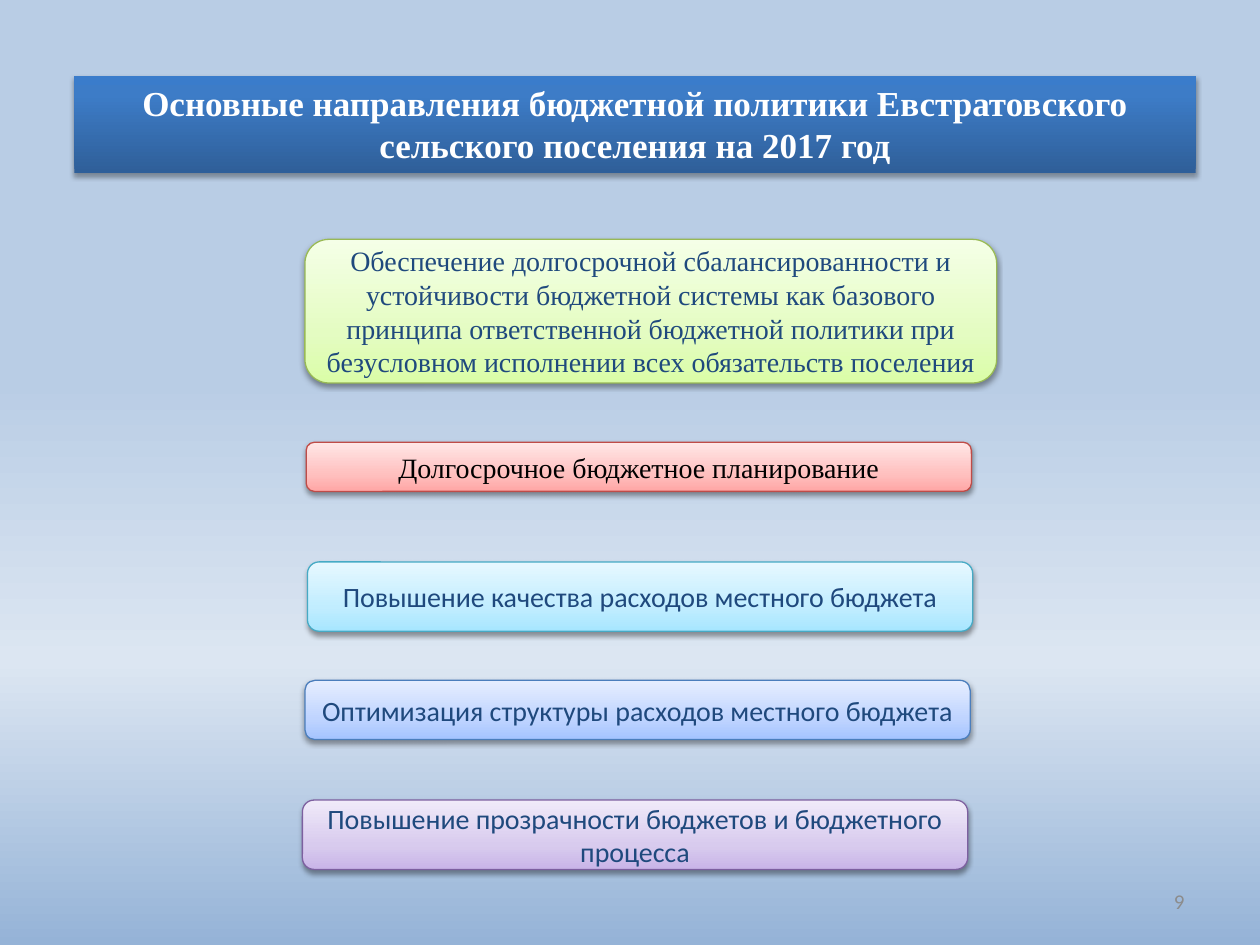
import pptx
import pptx.util
import pptx.dml.color
import pptx.enum.shapes
import pptx.enum.text
import pptx.oxml
import pptx.oxml.ns
import lxml.etree

Inches = pptx.util.Inches
ALIGN = pptx.enum.text.PP_ALIGN
ANCHOR = pptx.enum.text.MSO_ANCHOR
SERIF = "Times New Roman"
SANS = "Calibri"
NAVY = "1F497D"

# Text, font, text colour, (left, top, width, height), line colour, gradient from bottom to top
DIRECTIONS = [
    ("Обеспечение долгосрочной сбалансированности и устойчивости бюджетной системы "
     "как базового принципа ответственной бюджетной политики при безусловном "
     "исполнении всех обязательств поселения",
     SERIF, NAVY, (2.42, 1.9, 5.49, 1.14), "98B955", ("DAFDA7", "E4FCC2", "F5FFE7")),
    ("Долгосрочное бюджетное планирование",
     SERIF, "000000", (2.43, 3.51, 5.28, 0.39), "BF4C48", ("FFA6A5", "FFC0BF", "FFE7E7")),
    ("Повышение качества расходов местного бюджета",
     SANS, NAVY, (2.44, 4.46, 5.28, 0.55), "46AAC5", ("A7E6FF", "C1EDFF", "E7F8FF")),
    ("Оптимизация структуры расходов местного бюджета",
     SANS, NAVY, (2.42, 5.4, 5.28, 0.47), "4B7EBC", ("A4C4FF", "BFD4FF", "E6EEFF")),
    ("Повышение прозрачности бюджетов и бюджетного процесса",
     SANS, NAVY, (2.4, 6.35, 5.28, 0.55), "7D60A0", ("C9B5E8", "D8CBEE", "F0EAF9")),
]


def color(value):
    return pptx.dml.color.RGBColor.from_string(value)


def add_child(parent, tag, **attributes):
    child = lxml.etree.SubElement(parent, pptx.oxml.ns.qn(tag))
    for name, value in attributes.items():
        child.set(name, str(value))
    return child


def set_gradient(owner, fill, stops, angle):
    """Fill with (percent, colour) stops; the angle is counter-clockwise."""
    fill.gradient()
    fill.gradient_angle = angle
    stop_list = owner.element.find(".//" + pptx.oxml.ns.qn("a:gsLst"))
    for old_stop in list(stop_list):
        stop_list.remove(old_stop)
    for percent, value in stops:
        stop = add_child(stop_list, "a:gs", pos=percent * 1000)
        add_child(stop, "a:srgbClr", val=value)


def set_shadow(shape, opacity, distance):
    shape.shadow.inherit = False
    effects = shape.element.spPr.find(pptx.oxml.ns.qn("a:effectLst"))
    outer = add_child(effects, "a:outerShdw", blurRad=pptx.util.Pt(3.1),
                      dist=pptx.util.Pt(distance), dir=5400000, rotWithShape=0)
    shade = add_child(outer, "a:srgbClr", val="000000")
    add_child(shade, "a:alpha", val=opacity * 1000)


def set_text(shape, text, align, anchor, text_color, **font_values):
    frame = shape.text_frame
    frame_values = {"word_wrap": True, "vertical_anchor": anchor,
                    "auto_size": pptx.enum.text.MSO_AUTO_SIZE.NONE}
    for name, value in frame_values.items():
        setattr(frame, name, value)
    para = frame.paragraphs[0]
    para.alignment = align
    span = para.add_run()
    span.text = text
    for name, value in font_values.items():
        setattr(span.font, name, value)
    span.font.color.rgb = color(text_color)


def format_title(title):
    place = {"left": 0.59, "top": 0.6, "width": 8.9, "height": 0.77}
    for name, value in place.items():
        setattr(title, name, Inches(value))
    set_gradient(title, title.fill, [(0, "2F5F99"), (80, "3D7CC7"), (100, "3A7CCB")], 90)
    set_shadow(title, 35, 1.8)
    set_text(title, "Основные направления бюджетной политики Евстратовского "
             "сельского поселения на 2017 год", ALIGN.CENTER, ANCHOR.TOP, "FFFFFF",
             name=SERIF, size=pptx.util.Pt(20), bold=True)


def add_direction(page, text, font, text_color, place, line_color, shades):
    box = page.shapes.add_shape(pptx.enum.shapes.MSO_SHAPE.ROUNDED_RECTANGLE,
                                *map(Inches, place))
    set_gradient(box, box.fill, zip((0, 35, 100), shades), 90)
    box.line.color.rgb = color(line_color)
    box.line.width = pptx.util.Pt(0.75)
    set_shadow(box, 38, 1.6)
    set_text(box, text, ALIGN.CENTER, ANCHOR.MIDDLE, text_color,
             name=font, size=pptx.util.Pt(16))


def add_page_number(page, number):
    box = page.shapes.add_textbox(*map(Inches, (7.17, 6.95, 2.33, 0.4)))
    set_text(box, number, ALIGN.RIGHT, ANCHOR.MIDDLE, "8C8C8C",
             name=SANS, size=pptx.util.Pt(12))


def main():
    deck = pptx.Presentation()
    deck.slide_width, deck.slide_height = Inches(10), Inches(7.5)
    page = deck.slides.add_slide(deck.slide_layouts[5])

    # Background, from top to bottom
    set_gradient(page, page.background.fill,
                 [(0, "B9CDE5"), (40, "B9CDE5"), (70, "DCE6F2"), (100, "95B3D7")], 270)

    # Title banner, policy directions and page number
    format_title(page.shapes.title)
    for direction in DIRECTIONS:
        add_direction(page, *direction)
    add_page_number(page, "9")

    deck.save("out.pptx")


if __name__ == "__main__":
    main()
